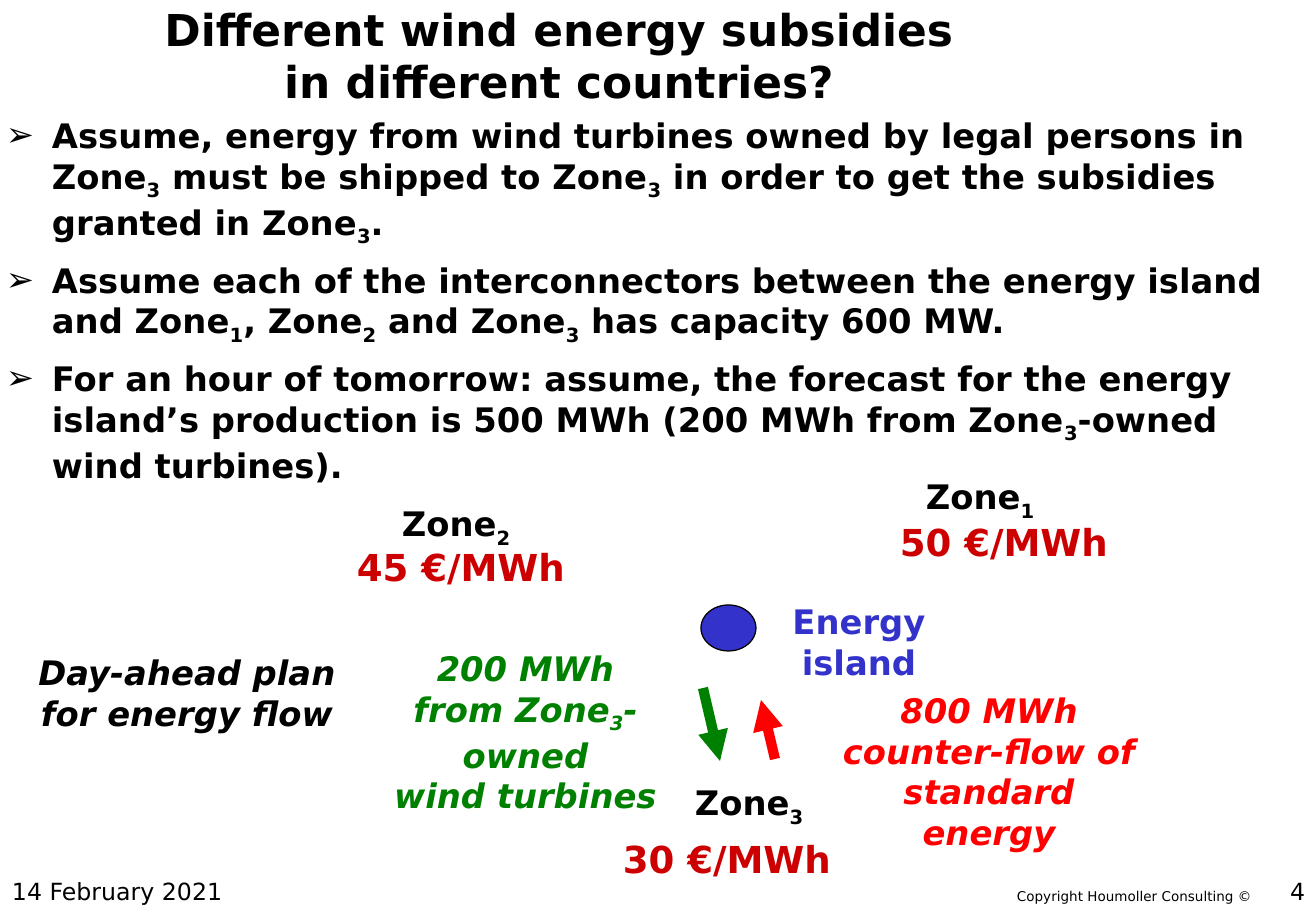
from lxml import etree
from pptx import Presentation, util as u
from pptx.dml.color import RGBColor
from pptx.enum import shapes, text
from pptx.oxml.ns import qn

# Content: "~" encloses a subscript
TITLE = ["Different wind energy subsidies", "in different countries?"]
ASSUMPTIONS = [
    "Assume, energy from wind turbines owned by legal persons in Zone~3~ must be "
    "shipped to Zone~3~ in order to get the subsidies granted in Zone~3~.",
    "Assume each of the interconnectors between the energy island and Zone~1~, "
    "Zone~2~ and Zone~3~ has capacity 600 MW.",
    "For an hour of tomorrow: assume, the forecast for the energy island’s production "
    "is 500 MWh (200 MWh from Zone~3~-owned wind turbines).",
]
# Zone name, its left and top, price, its left and top
ZONES = [
    ("Zone~1~", 914, 470, "50 €/MWh", 888, 513),
    ("Zone~2~", 390, 497, "45 €/MWh", 345, 538),
    ("Zone~3~", 683, 776, "30 €/MWh", 611, 830),
]
# Lines, box, colour, italic, wrap
LABELS = [
    (["Energy", "island"], (780, 595, 158, 94), "island", False, False),
    (["Day-ahead plan", "for energy flow"], (26, 646, 322, 94), "black", True, False),
    (["200 MWh", "from Zone~3~-", "owned", "wind turbines"],
     (381, 642, 289, 176), "green", True, False),
    (["800 MWh", "counter-flow of", "standard energy"],
     (823, 684, 332, 176), "red", True, True),
]
# Start, end, colour
FLOWS = [((703, 688), (720, 761), "green"), ((775, 759), (761, 700), "red")]
ISLAND = (701, 605, 55, 46)

COLORS = {"black": "000000", "island": "3333CC", "price": "CC0000",
          "green": "008000", "red": "FF0000"}
FONT = "DejaVu Sans"
SCALE = 7526  # EMU per px
LEFT, CENTER, RIGHT = text.PP_ALIGN.LEFT, text.PP_ALIGN.CENTER, text.PP_ALIGN.RIGHT
TOP, MIDDLE = text.MSO_ANCHOR.TOP, text.MSO_ANCHOR.MIDDLE


def emu(*lengths):
    return [u.Emu(length * SCALE) for length in lengths]


def color(name):
    return RGBColor.from_string(COLORS[name])


def add_bullet(paragraph, indent):
    properties = paragraph._p.get_or_add_pPr()
    properties.set("marL", str(indent))
    properties.set("indent", str(-indent))
    etree.SubElement(properties, qn("a:buFont")).set("typeface", FONT)
    etree.SubElement(properties, qn("a:buChar")).set("char", "➢")


def add_text(lines, box, size=20, ink="black", bold=True, italic=False,
             align=LEFT, anchor=TOP, wrap=False, bullets=False, gap=0):
    frame = slide.shapes.add_textbox(*emu(*box)).text_frame
    frame.word_wrap = wrap
    frame.vertical_anchor = anchor
    for index, line in enumerate(lines):
        paragraph = frame.paragraphs[0] if index == 0 else frame.add_paragraph()
        if bullets:
            add_bullet(paragraph, 46 * SCALE)
        paragraph.alignment = align
        if index and gap:
            paragraph.space_before = u.Pt(gap)
        for part, piece in enumerate(line.split("~")):
            if not piece:
                continue
            run = paragraph.add_run()
            run.text = piece
            font = run.font
            font.name, font.size = FONT, u.Pt(size)
            font.bold, font.italic = bold, italic
            font.color.rgb = color(ink)
            if part % 2:
                run._r.get_or_add_rPr().set("baseline", "-25000")


def add_arrow(start, end, ink):
    arrow = slide.shapes.add_connector(shapes.MSO_CONNECTOR.STRAIGHT, *emu(*start, *end))
    arrow.line.color.rgb = color(ink)
    arrow.line.width = u.Pt(6)
    etree.SubElement(arrow.line._get_or_add_ln(), qn("a:tailEnd")).set("type", "triangle")
    etree.SubElement(arrow._element.spPr, qn("a:effectLst"))


presentation = Presentation()
presentation.slide_width, presentation.slide_height = emu(1316, 911)
slide = presentation.slides.add_slide(presentation.slide_layouts[6])

# Title and assumptions
add_text(TITLE, (0, -12, 1119, 134), size=26, align=CENTER, anchor=MIDDLE, wrap=True)
add_text(ASSUMPTIONS, (-6, 109, 1323, 327), wrap=True, bullets=True, gap=7)

# Energy island
island = slide.shapes.add_shape(shapes.MSO_SHAPE.OVAL, *emu(*ISLAND))
island.shadow.inherit = False
island.fill.solid()
island.fill.fore_color.rgb = color("island")
island.line.color.rgb = color("black")
island.line.width = u.Pt(0.75)

# Zones with prices
for zone, zone_left, zone_top, price, price_left, price_top in ZONES:
    add_text([zone], (zone_left, zone_top, 135, 53))
    add_text([price], (price_left, price_top, 245, 57), size=22, ink="price")

# Flows and labels
for flow in FLOWS:
    add_arrow(*flow)
for lines, box, ink, italic, wrap in LABELS:
    add_text(lines, box, ink=ink, italic=italic, align=CENTER, wrap=wrap)

# Footer
add_text(["14 February 2021"], (0, 861, 275, 61), size=14, bold=False,
         anchor=MIDDLE, wrap=True)
add_text(["Copyright Houmoller Consulting ©"], (1005, 882, 262, 29), size=8, bold=False)
add_text(["4"], (1042, 861, 275, 61), size=14, bold=False, align=RIGHT,
         anchor=MIDDLE, wrap=True)

presentation.save("out.pptx")
